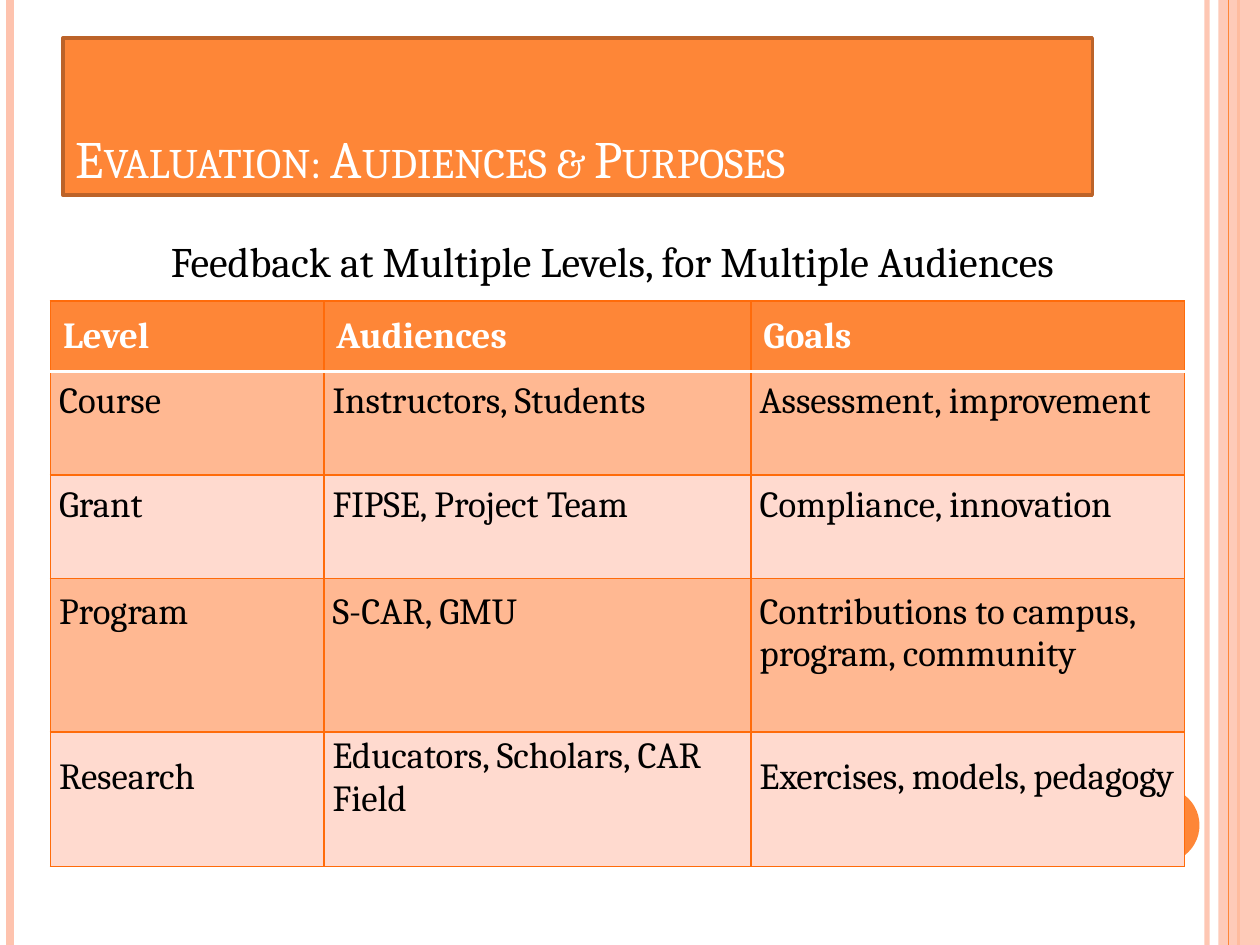
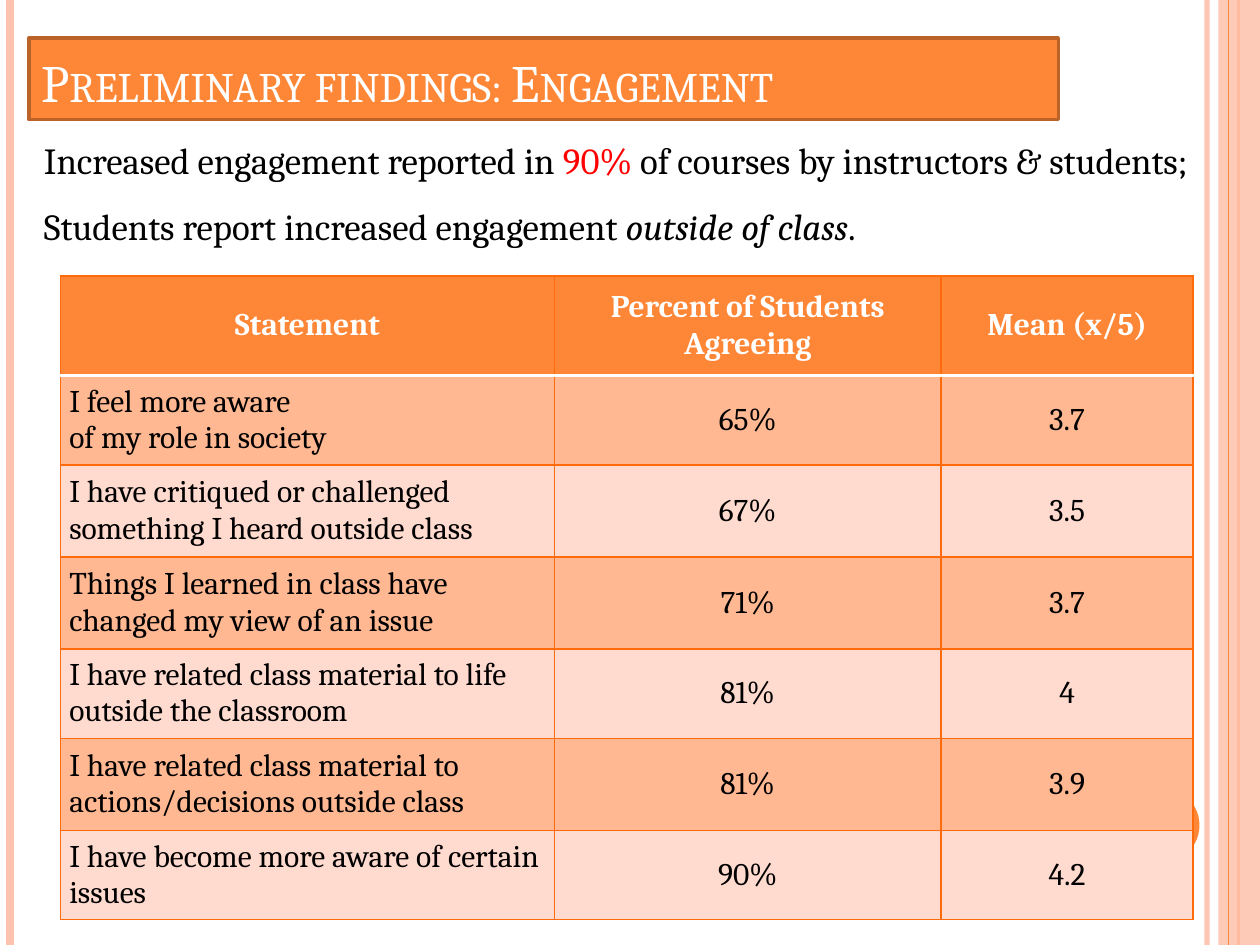
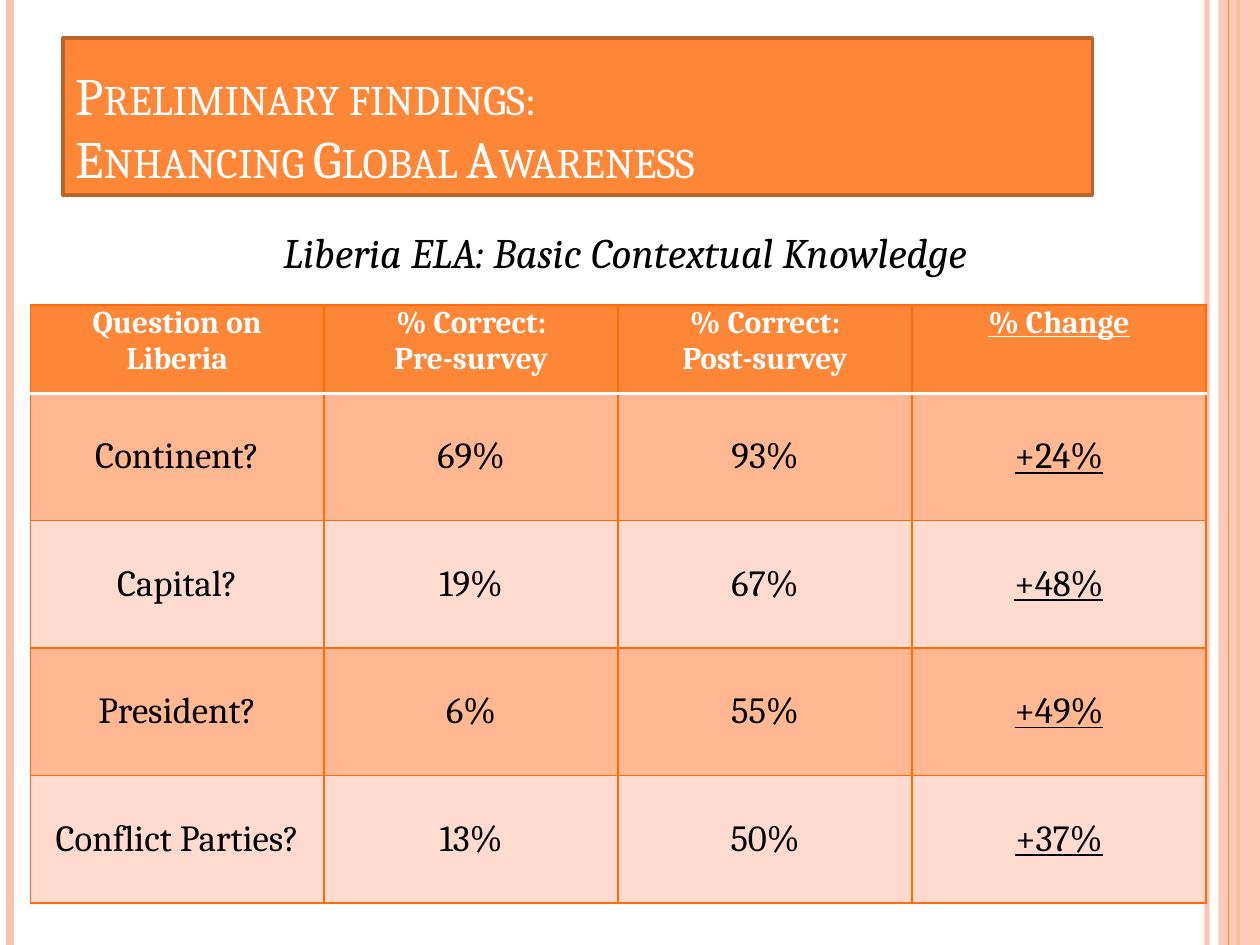
from lxml.etree import SubElement
from pptx import Presentation
from pptx.dml.color import RGBColor
from pptx.enum.shapes import MSO_CONNECTOR as CONNECTOR, MSO_SHAPE as SHAPE
from pptx.enum.text import MSO_ANCHOR as ANCHOR, PP_ALIGN as ALIGN
from pptx.oxml.ns import qn
from pptx.util import Inches, Pt

ORANGE = RGBColor(0xFE, 0x86, 0x37)
PEACH = RGBColor(0xFE, 0xC3, 0xAE)
BROWN = RGBColor(0xBC, 0x63, 0x29)
BORDER = RGBColor(0xFF, 0x6B, 0x0A)
DARK_BAND = RGBColor(0xFF, 0xB8, 0x92)
LIGHT_BAND = RGBColor(0xFF, 0xDA, 0xCF)
RED = RGBColor(0xFF, 0x00, 0x00)
WHITE = RGBColor(0xFF, 0xFF, 0xFF)
BLACK = RGBColor(0x00, 0x00, 0x00)

FONT = "Cambria"
SLIDE_WIDTH, SLIDE_HEIGHT = Inches(10), Inches(7.5)
COLUMNS, ROWS = 100, 75
TEXT_LINE = 3.4

AUDIENCES = [
    ["Level", "Audiences", "Goals"],
    ["Course", "Instructors, Students", "Assessment, improvement"],
    ["Grant", "FIPSE, Project Team", "Compliance, innovation"],
    ["Program", "S-CAR, GMU", "Contributions to campus, program, community"],
    ["Research", "Educators, Scholars, CAR Field", "Exercises, models, pedagogy"],
]
LINES_BELOW = [[0, 0, 0], [1, 1, 1], [1, 1, 1], [2, 2, 1], [1, 1, 1]]
ENGAGEMENT = [
    ["Statement", "Percent of Students Agreeing", "Mean (x/5)"],
    ["I feel more aware\nof my role in society", "65%", "3.7"],
    ["I have critiqued or challenged something I heard outside class", "67%", "3.5"],
    ["Things I learned in class have changed my view of an issue", "71%", "3.7"],
    ["I have related class material to life outside the classroom", "81%", "4"],
    ["I have related class material to actions/decisions outside class", "81%", "3.9"],
    ["I have become more aware of certain issues", "90%", "4.2"],
]
AWARENESS = [
    ["Question on Liberia", "% Correct:\nPre-survey", "% Correct:\nPost-survey", "% Change"],
    ["Continent?", "69%", "93%", "+24%"],
    ["Capital?", "19%", "67%", "+48%"],
    ["President?", "6%", "55%", "+49%"],
    ["Conflict Parties?", "13%", "50%", "+37%"],
]


def across(columns):
    """Return the length of a number of grid columns."""
    return round(SLIDE_WIDTH * columns / COLUMNS)


def down(rows):
    """Return the length of a number of grid rows."""
    return round(SLIDE_HEIGHT * rows / ROWS)


def box(left, top, width, height):
    """Turn a grid area into slide lengths."""
    return across(left), down(top), across(width), down(height)


def set_opacity(shape, percent):
    """Make the first colour of a shape partly transparent."""
    color = next(shape._element.iter(qn("a:srgbClr")))
    SubElement(color, qn("a:alpha"), val=str(percent * 1000))


def add_run(paragraph, text, size, color=BLACK, bold=False, italic=False, underline=False):
    """Add one styled run and return it."""
    run = paragraph.add_run()
    run.text = text
    font = run.font
    font.name, font.size, font.color.rgb = FONT, Pt(size), color
    font.bold, font.italic, font.underline = bold, italic, underline
    return run


def add_stripe(slide, column, color, weight):
    """Draw a full-height vertical line."""
    stripe = slide.shapes.add_connector(
        CONNECTOR.STRAIGHT, across(column), 0, across(column), SLIDE_HEIGHT)
    stripe.line.color.rgb, stripe.line.width = color, Pt(weight)
    SubElement(stripe._element.spPr, qn("a:effectLst"))
    return stripe


def add_block(slide, kind, area, fill, outline=None):
    """Draw a filled shape on a grid area."""
    block = slide.shapes.add_shape(kind, *box(*area))
    block.shadow.inherit = False
    block.fill.solid()
    block.fill.fore_color.rgb = fill
    if outline is None:
        block.line.fill.background()
    else:
        block.line.color.rgb, block.line.width = outline, Pt(2)
    return block


def add_decorated_slide(presentation):
    """Add a blank slide with the side stripes and the corner disc."""
    slide = presentation.slides.add_slide(presentation.slide_layouts[6])
    set_opacity(add_stripe(slide, 95.8, PEACH, 3), 93)
    add_stripe(slide, 0.8, PEACH, 4.5)
    add_stripe(slide, 98.3, ORANGE, 1.5)
    set_opacity(add_block(slide, SHAPE.RECTANGLE, (96.7, 0, 3.3, ROWS), PEACH), 87)
    add_stripe(slide, 97.5, ORANGE, 0.75)
    add_block(slide, SHAPE.OVAL, (89.2, 62.5, 6, 6), ORANGE)
    return slide


def add_title(slide, lines, left=5, height=12.5):
    """Add the orange title band with small capitals."""
    band = add_block(slide, SHAPE.RECTANGLE, (left, 3, 81.7, height), ORANGE, BROWN)
    band.text_frame.vertical_anchor = ANCHOR.BOTTOM
    paragraph = band.text_frame.paragraphs[0]
    paragraph.alignment = ALIGN.LEFT
    for index, line in enumerate(lines):
        if index:
            paragraph.add_line_break()
        run = add_run(paragraph, line, 30, WHITE)
        run._r.get_or_add_rPr().set("cap", "small")


def add_lead(slide, area, alignment):
    """Add an empty, wide-spaced paragraph above a table."""
    frame = slide.shapes.add_textbox(*box(*area)).text_frame
    frame.word_wrap = True
    paragraph = frame.paragraphs[0]
    paragraph.alignment, paragraph.line_spacing = alignment, 1.5
    return paragraph


def set_border(cell, side, color, weight):
    """Draw one side of a cell."""
    line = SubElement(cell._tc.get_or_add_tcPr(), qn(f"a:ln{side}"), w=str(Pt(weight)))
    fill = SubElement(line, qn("a:solidFill"))
    SubElement(fill, qn("a:srgbClr"), val=str(color))


def style_cell(cell, row):
    """Give a cell its borders and its band colour."""
    white_side = {0: "B", 1: "T"}.get(row)
    for side in "LRTB":
        color, weight = (WHITE, 2) if side == white_side else (BORDER, 1)
        set_border(cell, side, color, weight)
    cell.fill.solid()
    cell.fill.fore_color.rgb = ORANGE if row == 0 else DARK_BAND if row % 2 else LIGHT_BAND
    cell.vertical_anchor = ANCHOR.MIDDLE
    cell.margin_left = cell.margin_right = across(0.7)
    cell.margin_top = cell.margin_bottom = 0


def add_banded_table(slide, corner, widths, heights, texts, sizes, alignments, underlined=None):
    """Add a table whose sizes are those of the header and the body."""
    area = (*corner, sum(widths), sum(heights))
    table = slide.shapes.add_table(len(texts), len(widths), *box(*area)).table
    for column, width in zip(table.columns, widths):
        column.width = across(width)
    for row, height in zip(table.rows, heights):
        row.height = down(height)
    for row, values in enumerate(texts):
        header = row == 0
        for column, text in enumerate(values):
            cell = table.cell(row, column)
            style_cell(cell, row)
            for index, line in enumerate(text.split("\n")):
                frame = cell.text_frame
                paragraph = frame.add_paragraph() if index else frame.paragraphs[0]
                paragraph.alignment = alignments[0] if header else alignments[1][column]
                add_run(paragraph, line, sizes[0] if header else sizes[1],
                        WHITE if header else BLACK, bold=header,
                        underline=column == underlined)
    return table


def add_audiences_slide(presentation):
    """Build the slide on evaluation audiences."""
    slide = add_decorated_slide(presentation)
    add_title(slide, ["Evaluation: Audiences & Purposes"])
    lead = add_lead(slide, (1.5, 16.2, 94.2, 6.7), ALIGN.CENTER)
    add_run(lead, "Feedback at Multiple Levels, for Multiple Audiences", 24)
    table = add_banded_table(
        slide, (4, 23.9), [21.7, 33.9, 34.4], [5.6, 8.2, 8.2, 12.2, 10.7], AUDIENCES,
        (21, 21), (ALIGN.LEFT, [ALIGN.LEFT] * 3))
    for row, counts in enumerate(LINES_BELOW):
        for column, count in enumerate(counts):
            table.cell(row, column).margin_bottom = down(count * TEXT_LINE)
    for column in range(3):
        table.cell(0, column).margin_left = across(1)


def add_engagement_slide(presentation):
    """Build the slide on student engagement."""
    slide = add_decorated_slide(presentation)
    add_title(slide, ["Preliminary findings: Engagement"], left=2.3, height=6.5)
    lead = add_lead(slide, (2.5, 8.7, 94.2, 12), ALIGN.LEFT)
    add_run(lead, "Increased engagement reported in ", 21)
    add_run(lead, "90%", 21, RED)
    add_run(lead, " of courses by instructors & students; "
                  "Students report increased engagement ", 21)
    add_run(lead, "outside of class", 21, italic=True)
    add_run(lead, ".", 21)
    add_banded_table(
        slide, (4.8, 21.9), [39.2, 30.7, 20], [7.9, 7.1, 7.3, 7.3, 7.1, 7.3, 7.1], ENGAGEMENT,
        (18, 18), (ALIGN.CENTER, [ALIGN.LEFT, ALIGN.CENTER, ALIGN.CENTER]))


def add_awareness_slide(presentation):
    """Build the slide on global awareness."""
    slide = add_decorated_slide(presentation)
    add_title(slide, ["Preliminary findings:", "Enhancing Global Awareness"])
    lead = add_lead(slide, (2.5, 15.5, 94.2, 6.7), ALIGN.CENTER)
    add_run(lead, "Liberia ELA: Basic Contextual Knowledge", 24, italic=True)
    table = add_banded_table(
        slide, (2.4, 24.2), [23.33] * 4, [7] + [10.12] * 4, AWARENESS,
        (18, 21), (ALIGN.CENTER, [ALIGN.CENTER] * 4), underlined=3)
    for column in range(4):
        table.cell(0, column).vertical_anchor = ANCHOR.TOP


def main():
    """Build and save the presentation."""
    presentation = Presentation()
    presentation.slide_width, presentation.slide_height = SLIDE_WIDTH, SLIDE_HEIGHT
    add_audiences_slide(presentation)
    add_engagement_slide(presentation)
    add_awareness_slide(presentation)
    presentation.save("out.pptx")


if __name__ == "__main__":
    main()
